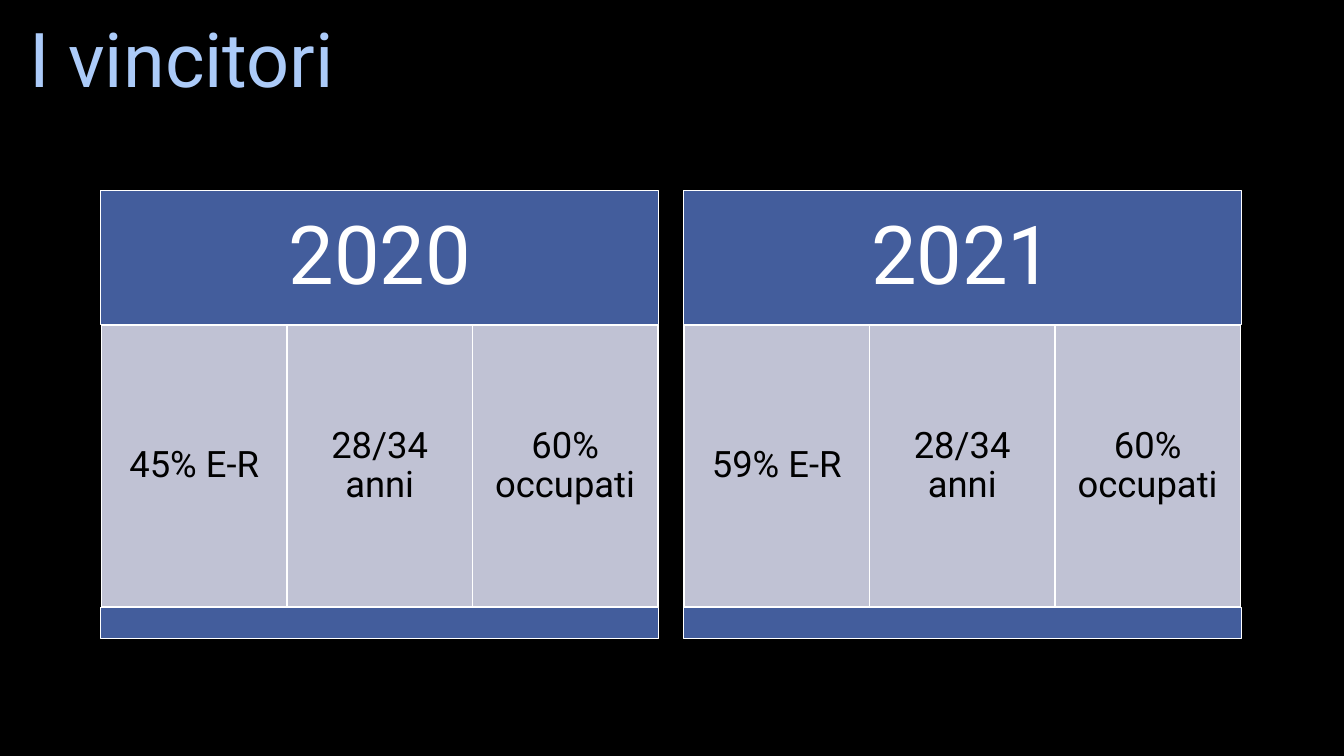
from dataclasses import dataclass

from pptx import Presentation
from pptx.dml.color import RGBColor
from pptx.enum.shapes import MSO_SHAPE
from pptx.enum.text import MSO_ANCHOR, MSO_AUTO_SIZE, PP_ALIGN
from pptx.util import Cm, Pt

RECTANGLE = MSO_SHAPE.RECTANGLE
MIDDLE = MSO_ANCHOR.MIDDLE
NO_FIT = MSO_AUTO_SIZE.NONE
LEFT, CENTER = PP_ALIGN.LEFT, PP_ALIGN.CENTER
TITLE_ONLY = 5


@dataclass(frozen=True)
class Theme:
    """Colours, font and type sizes of the deck."""
    font: str = "Roboto"
    black: RGBColor = RGBColor(0x00, 0x00, 0x00)
    white: RGBColor = RGBColor(0xFF, 0xFF, 0xFF)
    title: RGBColor = RGBColor(0xAC, 0xCB, 0xF9)
    band: RGBColor = RGBColor(0x43, 0x5D, 0x9C)
    cell: RGBColor = RGBColor(0xC0, 0xC2, 0xD4)
    title_size: Pt = Pt(54)
    year_size: Pt = Pt(58)
    fact_size: Pt = Pt(26)
    band_line: Pt = Pt(0.75)
    cell_line: Pt = Pt(1.25)


THEME = Theme()

WINNERS = {
    "2020": ["45% E-R", "28/34 anni", "60% occupati"],
    "2021": ["59% E-R", "28/34 anni", "60% occupati"],
}


def style_paragraph(para, text, size, color, align):
    """Write one uniformly formatted paragraph."""
    para.text = text
    para.alignment = align
    para.line_spacing = 0.9
    para.font.name = THEME.font
    para.font.size = size
    para.font.color.rgb = color


def add_title(page, text, left, top, width, height):
    """Place the slide title in the given box."""
    title = page.shapes.title
    title.left, title.top, title.width, title.height = left, top, width, height
    frame = title.text_frame
    frame.auto_size = NO_FIT
    frame.vertical_anchor = MIDDLE
    style_paragraph(frame.paragraphs[0], text, THEME.title_size, THEME.title, LEFT)


def add_block(group, left, top, width, height, fill, line_width):
    """Draw one white-edged rectangle and return it."""
    block = group.shapes.add_shape(RECTANGLE, left, top, width, height)
    block.shadow.inherit = False
    block.fill.solid()
    block.fill.fore_color.rgb = fill
    block.line.color.rgb = THEME.white
    block.line.width = line_width
    return block


def write_block(block, text, size, color, inset):
    """Centre a text in a block."""
    frame = block.text_frame
    frame.word_wrap = True
    frame.vertical_anchor = MIDDLE
    frame.margin_left = frame.margin_right = inset
    frame.margin_top = frame.margin_bottom = inset
    style_paragraph(frame.paragraphs[0], text, size, color, CENTER)


def add_year_panel(page, year, facts, left, top, width, height):
    """Draw a year header, a row of facts and a footer band in the given box."""
    group = page.shapes.add_group_shape()
    header_height = round(height * 0.3)
    footer_height = round(height * 0.07)
    facts_height = height - header_height - footer_height
    facts_top = top + header_height

    header = add_block(group, left, top, width, header_height,
                       THEME.band, THEME.band_line)
    write_block(header, year, THEME.year_size, THEME.white, Cm(0.6))

    margin = Cm(0.02)
    cell_width = (width - 2 * margin) // len(facts)
    for index, fact in enumerate(facts):
        cell = add_block(group, left + margin + index * cell_width, facts_top,
                         cell_width, facts_height, THEME.cell, THEME.cell_line)
        write_block(cell, fact, THEME.fact_size, THEME.black, Cm(0.28))

    add_block(group, left, facts_top + facts_height, width, footer_height,
              THEME.band, THEME.band_line)


def add_winners_slide(deck):
    """Build the slide comparing the winners of each year."""
    page = deck.slides.add_slide(deck.slide_layouts[TITLE_ONLY])
    page.background.fill.solid()
    page.background.fill.fore_color.rgb = THEME.black
    add_title(page, "I vincitori", Cm(0.48), Cm(0.25), Cm(28.75), Cm(2.7))

    panel_width, gap = Cm(14.06), Cm(0.62)
    for index, (year, facts) in enumerate(WINNERS.items()):
        add_year_panel(page, year, facts, Cm(2.54) + index * (panel_width + gap),
                       Cm(4.8), panel_width, Cm(11.29))


def main():
    """Create and save the deck."""
    deck = Presentation()
    deck.slide_width, deck.slide_height = Cm(33.87), Cm(19.05)
    add_winners_slide(deck)
    deck.save("out.pptx")


if __name__ == "__main__":
    main()
